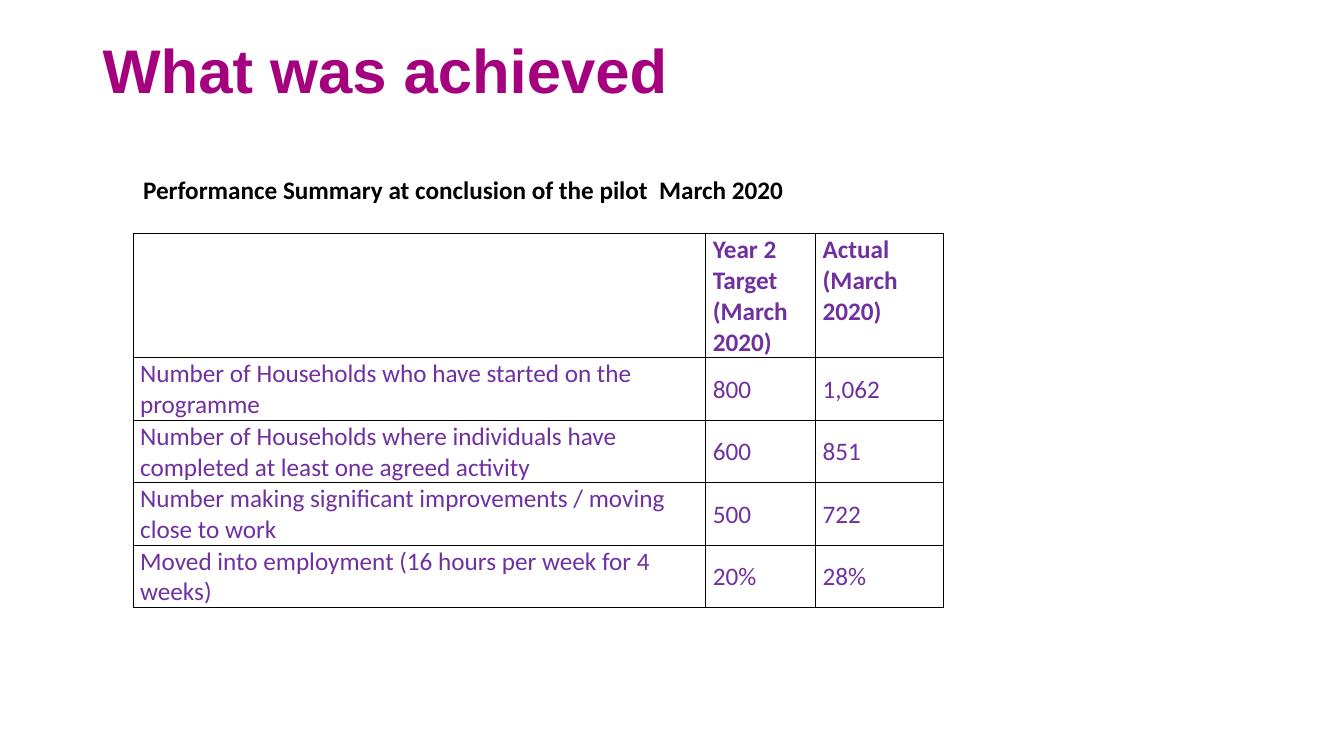
from lxml import etree
from pptx import Presentation
from pptx.dml.color import RGBColor
from pptx.enum.text import MSO_ANCHOR
from pptx.oxml.ns import qn
from pptx.util import Inches, Pt

TOP, MIDDLE = MSO_ANCHOR.TOP, MSO_ANCHOR.MIDDLE
THEME = {
    "title": {"font": "Arial", "size": 44, "color": "A5017F", "bold": True},
    "caption": {"font": "Calibri", "size": 18, "color": "000000", "bold": True},
    "head": {"font": "Calibri", "size": 18, "color": "7030A0", "bold": True},
    "body": {"font": "Calibri", "size": 18, "color": "7030A0", "bold": False},
    "border": {"color": "000000", "width": 1},
}


def write(frame, text, font, size, color, bold, spacing=None):
    """Fill a text frame, one paragraph for each line of text."""
    frame.text = text
    for para in frame.paragraphs:
        para.line_spacing = spacing
        para.font.name = font
        para.font.size = Pt(size)
        para.font.bold = bold
        para.font.color.rgb = RGBColor.from_string(color)


def outline(cell, color, width):
    """Draw all four borders of a cell, ahead of its fill in the XML."""
    props = cell._tc.get_or_add_tcPr()
    for place, side in enumerate(("lnL", "lnR", "lnT", "lnB")):
        line = etree.Element(qn(f"a:{side}"), w=str(Pt(width)))
        fill = etree.SubElement(line, qn("a:solidFill"))
        etree.SubElement(fill, qn("a:srgbClr"), val=color)
        props.insert(place, line)


deck = Presentation()
deck.slide_width, deck.slide_height = Inches(13.33), Inches(7.5)
slide = deck.slides.add_slide(deck.slide_layouts[6])

# Title
title = slide.shapes.add_textbox(
    Inches(0.92), 0, Inches(11.5), Inches(1.45)).text_frame
title.word_wrap = True
title.vertical_anchor = MIDDLE
write(title, "What was achieved", spacing=0.9, **THEME["title"])

# Results table
LEFT = Inches(1.32)
COLS = (5.68, 1.09, 1.27)
HEAD, ROW = 1.23, 0.62
RESULTS = (
    ("", "Year 2 Target (March 2020)", "Actual\n(March 2020)"),
    ("Number of Households who have started on the programme", "800", "1,062"),
    ("Number of Households where individuals have completed at least one agreed activity",
     "600", "851"),
    ("Number making significant improvements / moving close to work", "500", "722"),
    ("Moved into employment (16 hours per week for 4 weeks)", "20%", "28%"),
)
count = len(RESULTS)
table = slide.shapes.add_table(
    count, len(COLS), LEFT, Inches(2.32),
    Inches(sum(COLS)), Inches(HEAD + ROW * (count - 1))).table
for col, width in zip(table.columns, COLS):
    col.width = Inches(width)
for r, texts in enumerate(RESULTS):
    table.rows[r].height = Inches(ROW if r else HEAD)
    for c, text in enumerate(texts):
        cell = table.cell(r, c)
        cell.margin_left = cell.margin_right = Inches(0.07)
        cell.margin_top, cell.margin_bottom = Inches(0.01), 0
        cell.vertical_anchor = MIDDLE if r and c else TOP
        cell.fill.background()
        outline(cell, **THEME["border"])
        write(cell.text_frame, text, **THEME["body" if r else "head"])

# Table caption
caption = slide.shapes.add_textbox(
    LEFT, Inches(1.68), Inches(6.61), Inches(0.4)).text_frame
caption.word_wrap = False
write(caption, "Performance Summary at conclusion of the pilot  March 2020",
      **THEME["caption"])

deck.save("out.pptx")
